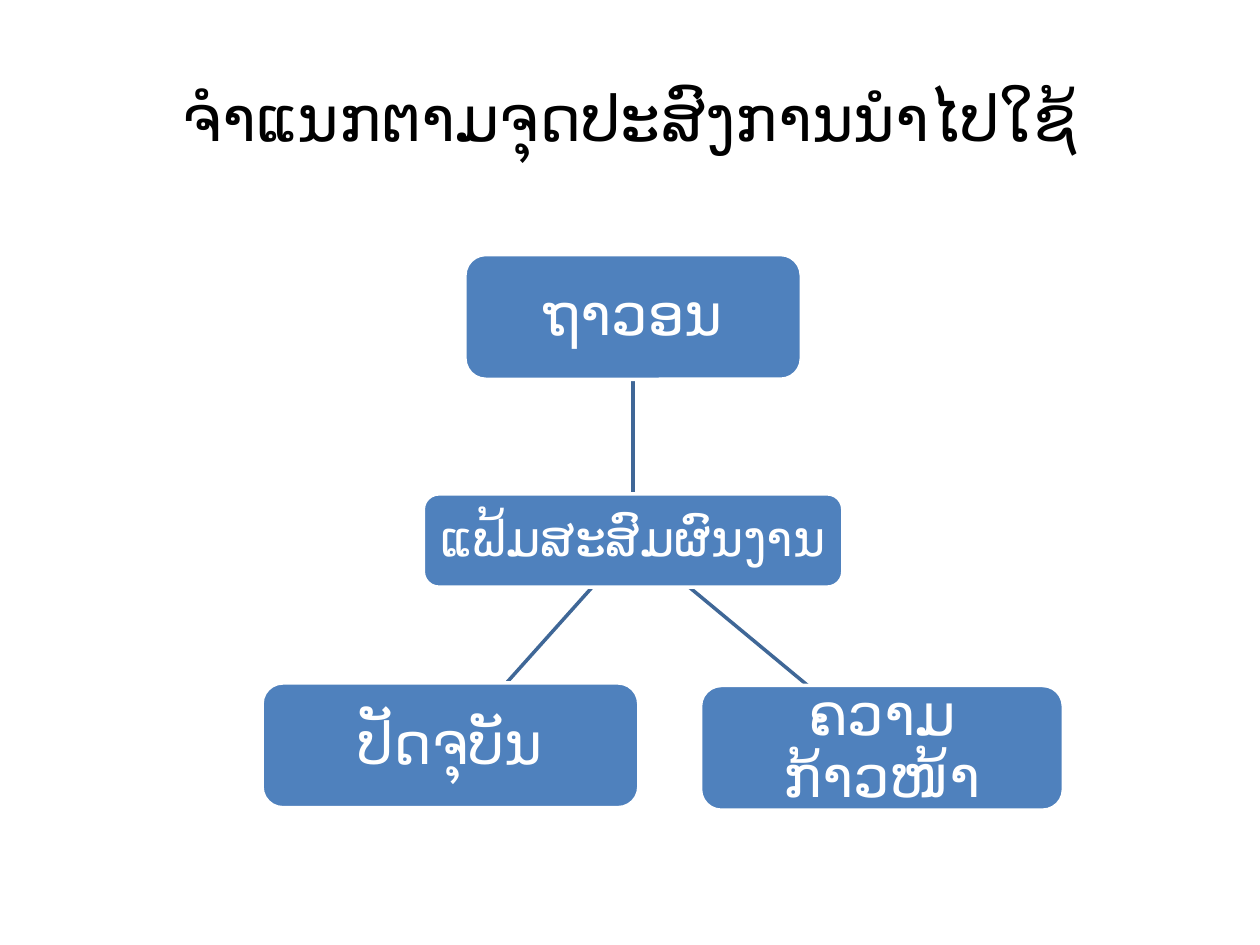
from typing import NamedTuple

from lxml.etree import SubElement
from pptx import Presentation
from pptx.dml.color import RGBColor
from pptx.enum.shapes import MSO_CONNECTOR, MSO_SHAPE
from pptx.enum.text import MSO_ANCHOR, PP_ALIGN
from pptx.oxml.ns import qn
from pptx.util import Inches, Pt

FONT = "Calibri"
WHITE, BLUE, NAVY, BLACK = "FFFFFF", "4F81BD", "3F6797", "000000"
COLS, ROWS = 100, 75  # grid over the whole slide


class Box(NamedTuple):
    text: str
    col: float
    row: float
    wide: float
    high: float
    size: int = 33
    inset: float = 0.9


class Link(NamedTuple):
    start: tuple[float, float]
    end: tuple[float, float]


HUB = Box("ແຟ້ມສະສົມຜົນງານ", 33.6, 39.2, 33.3, 7.4, 28, 0.7)
TOP = Box("ຖາວອນ", 36.9, 20.2, 26.7, 9.9)
RIGHT = Box("ຄວາມກ້າວໜ້າ", 55.6, 54.4, 28.8, 9.9)
LEFT = Box("ປັດຈຸບັນ", 20.8, 54.2, 29.9, 9.9)

BASE = HUB.row + HUB.high
SLOPES = [
    Link((54.7, BASE), (64.1, RIGHT.row)),
    Link((47, BASE), (40.2, LEFT.row)),
]

deck = Presentation()
deck.slide_width, deck.slide_height = Inches(10), Inches(7.5)
slide = deck.slides.add_slide(deck.slide_layouts[5])


def x(col: float) -> int:
    return round(deck.slide_width * col / COLS)


def y(row: float) -> int:
    return round(deck.slide_height * row / ROWS)


def color(code: str) -> RGBColor:
    return RGBColor.from_string(code)


def write(shape, text: str, size: int, code: str) -> None:
    frame = shape.text_frame
    frame.text = text
    frame.word_wrap = True
    frame.vertical_anchor = MSO_ANCHOR.MIDDLE
    para = frame.paragraphs[0]
    para.alignment = PP_ALIGN.CENTER
    font = para.runs[0].font
    font.name, font.size = FONT, Pt(size)
    font.color.rgb = color(code)


def draw_box(box: Box):
    shape = slide.shapes.add_shape(
        MSO_SHAPE.ROUNDED_RECTANGLE,
        x(box.col), y(box.row), x(box.wide), y(box.high))
    shape.shadow.inherit = False
    shape.fill.solid()
    shape.fill.fore_color.rgb = color(BLUE)
    shape.line.color.rgb = color(WHITE)
    shape.line.width = Pt(2)
    write(shape, box.text, box.size, WHITE)
    frame = shape.text_frame
    frame.margin_left = frame.margin_right = x(box.inset)
    frame.margin_top = frame.margin_bottom = y(box.inset)
    frame.paragraphs[0].line_spacing = 0.9
    return shape


def draw_link(link: Link):
    (left, top), (right, low) = link
    line = slide.shapes.add_connector(
        MSO_CONNECTOR.STRAIGHT, x(left), y(top), x(right), y(low))
    line.line.color.rgb = color(NAVY)
    line.line.width = Pt(2)
    SubElement(line.element.spPr, qn("a:effectLst"))
    return line


# Title
title = slide.shapes.title
title.left, title.top = x(5), y(3)
title.width, title.height = x(90), y(12.5)
write(title, "ຈຳແນກຕາມຈຸດປະສົງການນຳໄປໃຊ້", 36, BLACK)

# Sloping links lie under the boxes
for link in SLOPES:
    draw_link(link)

# Boxes
hub, top, right, left = [draw_box(box) for box in (HUB, TOP, RIGHT, LEFT)]

# Upright link, joined to the boxes and moved beneath them
mid = HUB.col + HUB.wide / 2
stem = draw_link(Link((mid, HUB.row), (mid, TOP.row + TOP.high)))
stem.begin_connect(hub, 0)
stem.end_connect(top, 2)
hub.element.addprevious(stem.element)

deck.save("out.pptx")
